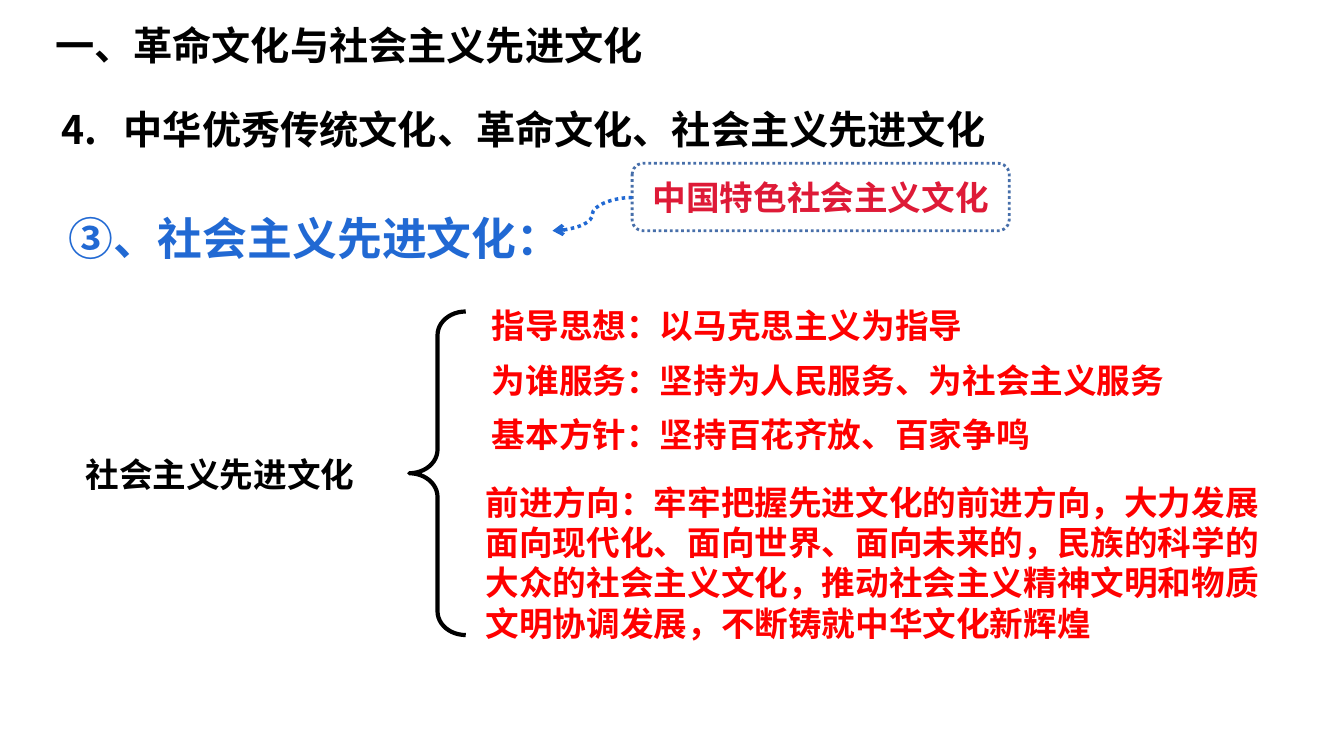
from dataclasses import dataclass

from lxml import etree
from pptx import Presentation
from pptx.dml.color import RGBColor
from pptx.enum.dml import MSO_LINE
from pptx.enum.shapes import MSO_CONNECTOR, MSO_SHAPE
from pptx.enum.text import MSO_ANCHOR, MSO_AUTO_SIZE, PP_ALIGN
from pptx.oxml.ns import qn
from pptx.slide import Slide
from pptx.text.text import _Paragraph
from pptx.util import Inches, Pt

CURVE = MSO_CONNECTOR.CURVE
LEFT_BRACE = MSO_SHAPE.LEFT_BRACE
ROUNDED = MSO_SHAPE.ROUNDED_RECTANGLE
DOTTED = MSO_LINE.ROUND_DOT
MIDDLE = MSO_ANCHOR.MIDDLE
CENTER = PP_ALIGN.CENTER
FIT_SHAPE = MSO_AUTO_SIZE.SHAPE_TO_FIT_TEXT

CJK = "Noto Sans CJK SC"
LATIN = "Arial"
BLACK = "000000"
RED = "FF0000"
BLUE = "2169D3"
CRIMSON = "DE1A37"
BORDER_BLUE = "476FAA"

POINT_SIZE = 24
POINTS_TOP = 2.98
POINTS_PITCH = 0.54


@dataclass
class Label:
    text: str
    left: float
    top: float
    width: float
    height: float
    size: int
    color: str
    wrap: bool = True
    line_spacing: float | None = None
    tab: float | None = None


def rgb(value: str) -> RGBColor:
    return RGBColor.from_string(value)


def style_runs(paragraph: _Paragraph, size: int, color: str, face: str) -> None:
    for run in paragraph.runs:
        run.font.size = Pt(size)
        run.font.bold = True
        run.font.color.rgb = rgb(color)
        run.font.name = face
        properties = run.font._element
        etree.SubElement(properties, qn("a:ea"), typeface=face)


def add_label(slide: Slide, label: Label) -> None:
    box = slide.shapes.add_textbox(
        Inches(label.left), Inches(label.top), Inches(label.width), Inches(label.height)
    )
    frame = box.text_frame
    frame.text = label.text
    frame.word_wrap = label.wrap
    frame.auto_size = FIT_SHAPE
    paragraph = frame.paragraphs[0]
    if label.line_spacing is not None:
        paragraph.line_spacing = label.line_spacing
    if label.tab is not None:
        tabs = etree.SubElement(paragraph._p.get_or_add_pPr(), qn("a:tabLst"))
        etree.SubElement(tabs, qn("a:tab"), pos=str(Inches(label.tab)), algn="l")
    style_runs(paragraph, label.size, label.color, CJK)


def one_line(text: str, left: float, top: float, color: str) -> Label:
    width = len(text) * POINT_SIZE / 72 + 0.2
    return Label(text, left, top, width, 0.5, POINT_SIZE, color, wrap=False)


def add_brace(slide: Slide) -> None:
    brace = slide.shapes.add_shape(
        LEFT_BRACE, Inches(4.06), Inches(3.09), Inches(0.56), Inches(3.21)
    )
    brace.shadow.inherit = False
    brace.adjustments[0] = 0.42
    brace.fill.background()
    brace.line.color.rgb = rgb(BLACK)
    brace.line.width = Pt(3)


def add_callout(slide: Slide) -> None:
    callout = slide.shapes.add_shape(
        ROUNDED, Inches(6.27), Inches(1.62), Inches(3.74), Inches(0.67)
    )
    callout.shadow.inherit = False
    callout.fill.background()
    callout.line.color.rgb = rgb(BORDER_BLUE)
    callout.line.width = Pt(2)
    callout.line.dash_style = DOTTED
    frame = callout.text_frame
    frame.text = "中国特色社会主义文化"
    frame.vertical_anchor = MIDDLE
    paragraph = frame.paragraphs[0]
    paragraph.alignment = CENTER
    style_runs(paragraph, 24, CRIMSON, LATIN)


def add_callout_arrow(slide: Slide) -> None:
    arrow = slide.shapes.add_connector(
        CURVE, Inches(6.27), Inches(1.96), Inches(5.48), Inches(2.29)
    )
    arrow.line.color.rgb = rgb(BLUE)
    arrow.line.width = Pt(2.5)
    arrow.line.dash_style = DOTTED
    properties = arrow._element.spPr
    etree.SubElement(properties.find(qn("a:ln")), qn("a:tailEnd"), type="arrow")
    etree.SubElement(properties, qn("a:effectLst"))


HEADINGS = [
    Label("一、革命文化与社会主义先进文化", 0.45, 0.16, 6.96, 0.57, 28, BLACK),
    Label("4.\t中华优秀传统文化、革命文化、社会主义先进文化",
          0.51, 1, 10.73, 0.57, 28, BLACK, tab=0.62),
    Label("③、社会主义先进文化：", 0.58, 1.88, 5.27, 0.79, 32, BLUE, line_spacing=1.3),
]
TOPIC = one_line("社会主义先进文化", 0.75, 4.45, BLACK)
POINTS = [
    "指导思想：以马克思主义为指导",
    "为谁服务：坚持为人民服务、为社会主义服务",
    "基本方针：坚持百花齐放、百家争鸣",
]
DIRECTION = Label(
    "前进方向：牢牢把握先进文化的前进方向，大力发展面向现代化、面向世界、面向未来的，"
    "民族的科学的大众的社会主义文化，推动社会主义精神文明和物质文明协调发展，"
    "不断铸就中华文化新辉煌",
    4.72, 4.73, 8.14, 1.7, POINT_SIZE, RED,
)


def main() -> None:
    presentation = Presentation()
    presentation.slide_width = Inches(13.33)
    presentation.slide_height = Inches(7.5)
    slide = presentation.slides.add_slide(presentation.slide_layouts[6])

    points = [
        one_line(text, 4.78, POINTS_TOP + row * POINTS_PITCH, RED)
        for row, text in enumerate(POINTS)
    ]
    for label in [*HEADINGS, TOPIC, *points, DIRECTION]:
        add_label(slide, label)
    add_brace(slide)
    add_callout(slide)
    add_callout_arrow(slide)

    presentation.save("out.pptx")


if __name__ == "__main__":
    main()
